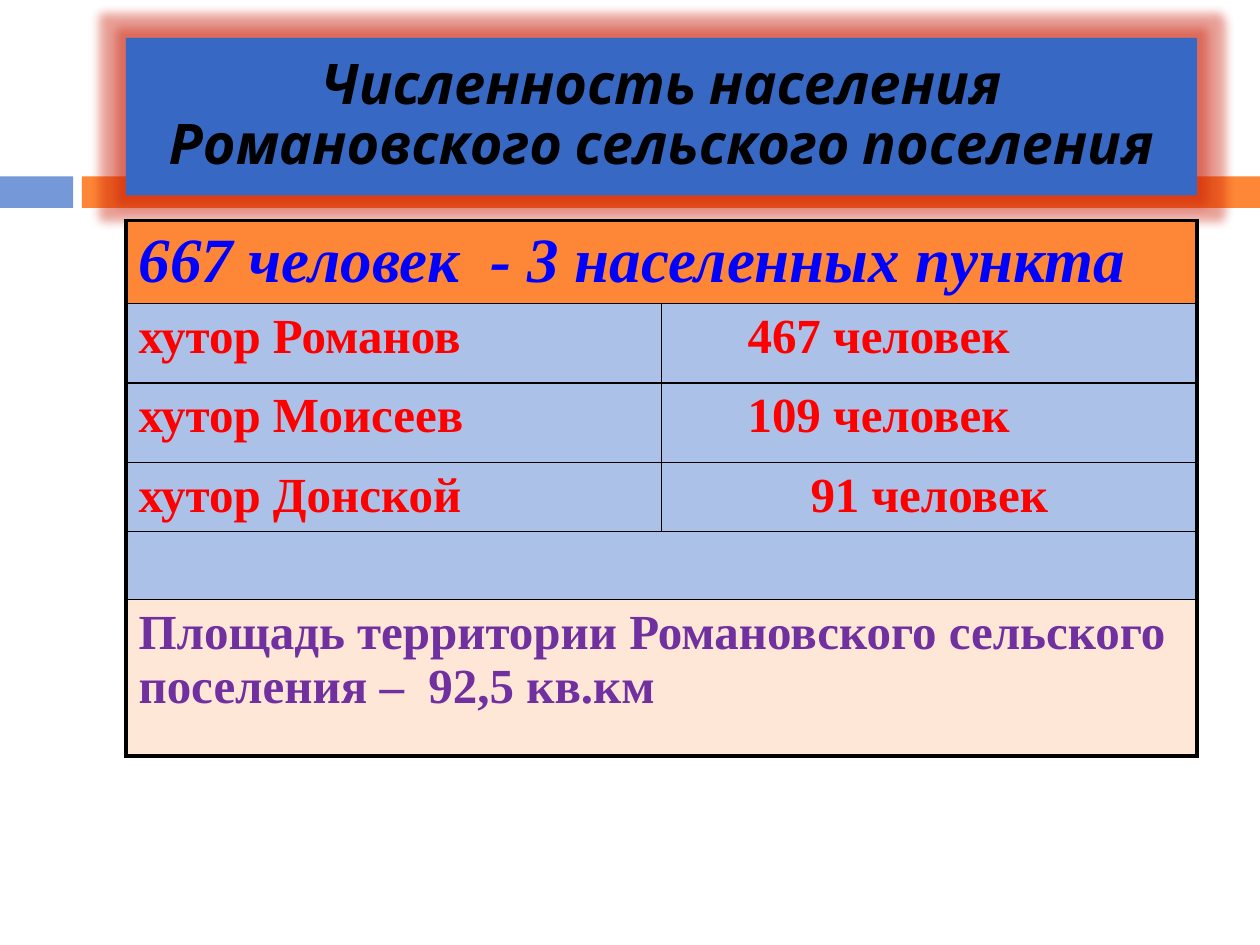
from dataclasses import dataclass

from lxml import etree
from pptx import Presentation
from pptx.dml.color import RGBColor
from pptx.enum.shapes import MSO_SHAPE
from pptx.enum.text import MSO_ANCHOR, PP_ALIGN
from pptx.oxml.ns import qn
from pptx.util import Pt

RECTANGLE = MSO_SHAPE.RECTANGLE
MIDDLE = MSO_ANCHOR.MIDDLE
LEFT, CENTER = PP_ALIGN.LEFT, PP_ALIGN.CENTER

COLORS = {
    "black": "000000", "blue": "3668C4", "light_blue": "7598D9",
    "pale_blue": "ACC1E8", "orange": "FE8637", "pale_orange": "FFE7D7",
    "glow": "C81800", "heading": "0000FF", "red": "FF0000", "purple": "7030A0",
}
TITLE_FONT, TABLE_FONT = "Cabin", "Times New Roman"
OUTER_BORDER, INNER_BORDER = 2.25, 1
CELL_MARGIN, COUNT_MARGIN = 7.2, 49.2


@dataclass
class Block:
    left: float
    top: float
    width: float
    height: float
    fill: str


@dataclass
class Entry:
    text: str
    color: str = "red"
    size: float = 28
    italic: bool = False
    align: PP_ALIGN = LEFT
    margin: float = CELL_MARGIN


@dataclass
class Row:
    height: float
    fill: str
    entries: list[Entry]


BARS = [
    Block(0, 100.8, 41.76, 18, "light_blue"),
    Block(46.8, 100.8, 673.2, 18, "orange"),
]
TITLE = Block(72, 21.6, 612, 90, "blue")
TITLE_TEXT = Entry("Численность населения Романовского сельского поселения",
                   "black", 32, True, CENTER)
ROWS = [
    Row(47.5, "orange", [Entry("667 человек  - 3 населенных пункта", "heading", 36, True)]),
    Row(45.36, "pale_blue", [Entry("хутор Романов"), Entry("467 человек", margin=COUNT_MARGIN)]),
    Row(45.36, "pale_blue", [Entry("хутор Моисеев"), Entry("109 человек", margin=COUNT_MARGIN)]),
    Row(39.6, "pale_blue", [Entry("хутор Донской"), Entry("91 человек", align=CENTER)]),
    Row(38.88, "pale_blue", [Entry("")]),
    Row(89.28, "pale_orange", [
        Entry("Площадь территории Романовского сельского поселения –  92,5 кв.км", "purple")]),
]


def rgb(name: str) -> RGBColor:
    """Return a named colour."""
    return RGBColor.from_string(COLORS[name])


def add_block(slide, block: Block):
    """Draw a filled rectangle without outline or shadow."""
    shape = slide.shapes.add_shape(
        RECTANGLE, Pt(block.left), Pt(block.top), Pt(block.width), Pt(block.height))
    shape.shadow.inherit = False
    shape.fill.solid()
    shape.fill.fore_color.rgb = rgb(block.fill)
    shape.line.fill.background()
    return shape


def write_entry(text_frame, entry: Entry, font_name: str) -> None:
    """Put one formatted bold paragraph in a text frame."""
    text_frame.text = entry.text
    paragraph = text_frame.paragraphs[0]
    paragraph.alignment = entry.align
    for run in paragraph.runs:
        run.font.name = font_name
        run.font.size = Pt(entry.size)
        run.font.bold = True
        run.font.italic = entry.italic
        run.font.color.rgb = rgb(entry.color)


def add_glow(shape, color: str, radius: float) -> None:
    """Surround a shape with a translucent glow."""
    effects = shape.element.spPr.find(qn("a:effectLst"))
    glow = etree.SubElement(effects, qn("a:glow"), rad=str(Pt(radius)))
    tint = etree.SubElement(glow, qn("a:srgbClr"), val=COLORS[color])
    etree.SubElement(tint, qn("a:alpha"), val="40000")


def add_title(slide) -> None:
    """Draw the glowing title panel."""
    shape = add_block(slide, TITLE)
    add_glow(shape, "glow", 11)
    text_frame = shape.text_frame
    text_frame.word_wrap = True
    text_frame.vertical_anchor = MIDDLE
    write_entry(text_frame, TITLE_TEXT, TITLE_FONT)
    text_frame.paragraphs[0].line_spacing = 0.9


def set_borders(cell, widths: dict[str, float]) -> None:
    """Give a cell black borders of the given widths."""
    properties = cell._tc.get_or_add_tcPr()
    for position, (side, width) in enumerate(widths.items()):
        line = etree.Element(qn(f"a:{side}"), w=str(Pt(width)))
        fill = etree.SubElement(line, qn("a:solidFill"))
        etree.SubElement(fill, qn("a:srgbClr"), val=COLORS["black"])
        properties.insert(position, line)


def add_population_table(slide) -> None:
    """Draw the population table with a thick outer frame."""
    height = sum(row.height for row in ROWS)
    table = slide.shapes.add_table(
        len(ROWS), 2, Pt(72), Pt(126), Pt(612), Pt(height)).table
    for row_index, row in enumerate(ROWS):
        table.rows[row_index].height = Pt(row.height)
        if len(row.entries) == 1:
            table.cell(row_index, 0).merge(table.cell(row_index, 1))
        for column_index in range(2):
            cell = table.cell(row_index, column_index)
            cell.fill.solid()
            cell.fill.fore_color.rgb = rgb(row.fill)
            merged = len(row.entries) == 1
            edges = {
                "lnL": merged or column_index == 0,
                "lnR": merged or column_index == 1,
                "lnT": row_index == 0,
                "lnB": row_index == len(ROWS) - 1,
            }
            set_borders(cell, {side: OUTER_BORDER if outer else INNER_BORDER
                               for side, outer in edges.items()})
        for column_index, entry in enumerate(row.entries):
            cell = table.cell(row_index, column_index)
            cell.margin_left = Pt(entry.margin)
            write_entry(cell.text_frame, entry, TABLE_FONT)


def main() -> None:
    """Build and save the population slide."""
    presentation = Presentation()
    presentation.slide_width, presentation.slide_height = Pt(720), Pt(540)
    slide = presentation.slides.add_slide(presentation.slide_layouts[6])
    for bar in BARS:
        add_block(slide, bar)
    add_title(slide)
    add_population_table(slide)
    presentation.save("out.pptx")


if __name__ == "__main__":
    main()
